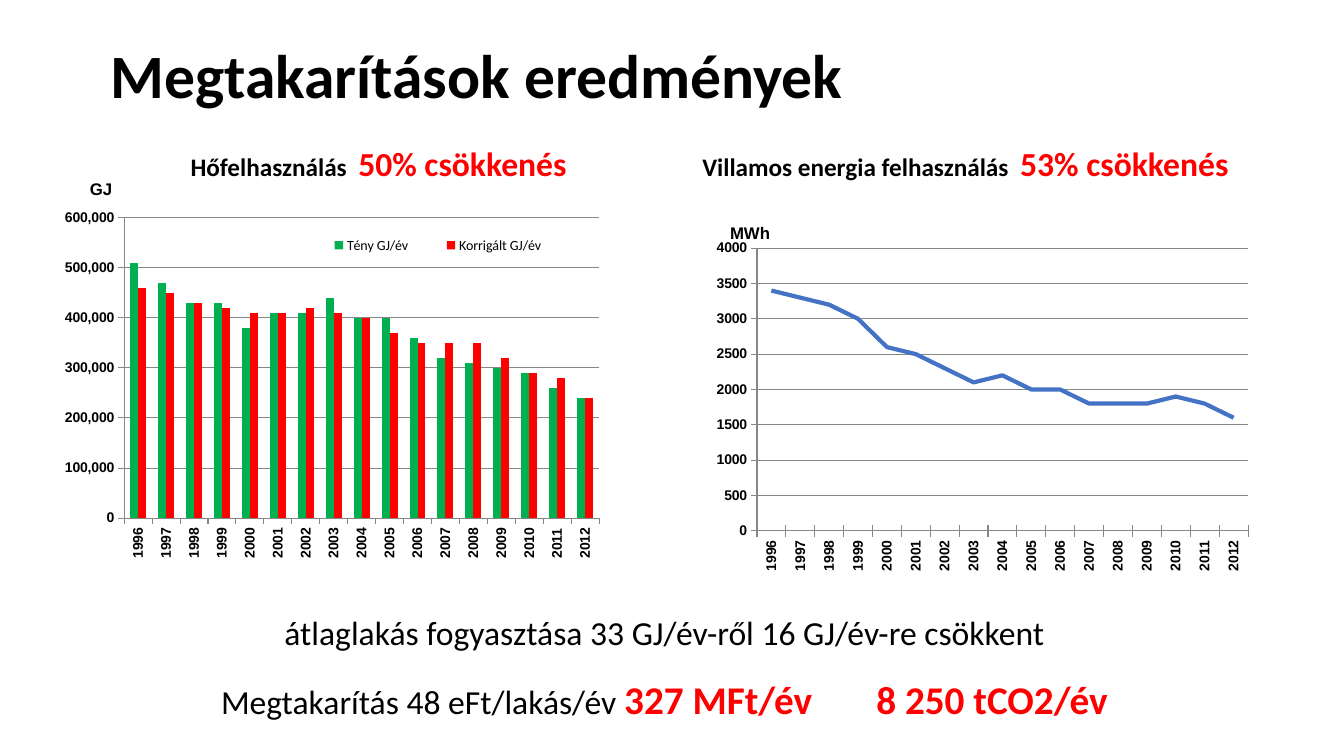
from dataclasses import dataclass

from lxml import etree
from pptx import Presentation
from pptx.chart.data import CategoryChartData
from pptx.dml.color import RGBColor
from pptx.enum import chart as ch, text as tx
from pptx.oxml import ns, parse_xml
from pptx.util import Inches, Pt


@dataclass(frozen=True)
class Theme:
    black: str = "000000"
    red: str = "FF0000"
    green: str = "00B050"
    blue: str = "4472C4"
    grid: str = "868686"
    font: str = "Calibri"
    label: str = "Arial"
    title: int = 44
    large: int = 28
    mid: int = 24
    head: int = 18
    unit: int = 12
    tick: int = 10


T = Theme()
YEARS = [str(year) for year in range(1996, 2013)]
HEAT = [
    ("Tény GJ/év", T.green, [510, 470, 430, 430, 380, 410, 410, 440, 400,
                             400, 360, 320, 310, 300, 290, 260, 240]),
    ("Korrigált GJ/év", T.red, [460, 450, 430, 420, 410, 410, 420, 410, 400,
                                370, 350, 350, 350, 320, 290, 280, 240]),
]
POWER = [("Series 1", T.blue, [34, 33, 32, 30, 26, 25, 23, 21, 22,
                               20, 20, 18, 18, 18, 19, 18, 16])]


def style(font, size, color=T.black, bold=False, name=T.font):
    font.size, font.bold, font.name = Pt(size), bold, name
    font.color.rgb = RGBColor.from_string(color)


def add_run(para, words, size, color=T.black, bold=False):
    run = para.add_run()
    run.text = words
    style(run.font, size, color, bold)
    return run


def add_shade(run):
    """Give the letters a soft shadow falling down and to the left."""
    fill = run.font._element.find(ns.qn("a:solidFill"))
    fill.addnext(parse_xml(
        f'<a:effectLst {ns.nsdecls("a")}><a:outerShdw blurRad="50800" '
        'dist="50800" dir="7200000" algn="tl" rotWithShape="0">'
        '<a:srgbClr val="000000"/></a:outerShdw></a:effectLst>'))


def set_place(node, x, y, w=None, h=None, inner=False):
    """Fix a chart part at fractions of the chart's size."""
    for old in node.findall(ns.qn("c:layout")):
        node.remove(old)
    layout = etree.Element(ns.qn("c:layout"))
    manual = etree.SubElement(layout, ns.qn("c:manualLayout"))
    pairs = [("layoutTarget", "inner")] if inner else []
    pairs += [("xMode", "edge"), ("yMode", "edge"), ("x", x), ("y", y)]
    if w:
        pairs += [("w", w), ("h", h)]
    for tag, val in pairs:
        etree.SubElement(manual, ns.qn(f"c:{tag}")).set("val", str(val))
    over = node.find(ns.qn("c:overlay"))
    if over is None:
        node.insert(0, layout)
    else:
        over.addprevious(layout)


def add_title(slide, box, words):
    title = slide.shapes.title
    title.left, title.top, title.width, title.height = map(Inches, box)
    frame = title.text_frame
    frame.vertical_anchor = tx.MSO_ANCHOR.MIDDLE
    para = frame.paragraphs[0]
    para.alignment, para.line_spacing = tx.PP_ALIGN.LEFT, 0.9
    add_run(para, words, T.title, bold=True)


def add_frame(slide, box):
    frame = slide.shapes.add_textbox(*map(Inches, box)).text_frame
    frame.word_wrap = True
    return frame


def add_head(slide, box, words, drop):
    para = add_frame(slide, box).paragraphs[0]
    para.alignment, para.line_spacing = tx.PP_ALIGN.CENTER, 0.9
    add_run(para, words, T.head, bold=True)
    add_run(para, drop, T.mid, T.red, True)


def set_axis(axis, tick):
    style(axis.tick_labels.font, T.tick, bold=True, name=T.label)
    axis.major_tick_mark = tick
    axis.minor_tick_mark = ch.XL_TICK_MARK.NONE
    axis.format.line.color.rgb = RGBColor.from_string(T.grid)
    axis.format.line.width = Pt(0.75)


def add_plot(slide, box, kind, rows, scale, top, step, unit, spot, area, tick):
    """Add a chart by year with its unit standing above the value axis."""
    data = CategoryChartData()
    data.categories = YEARS
    for name, _, vals in rows:
        data.add_series(name, [val * scale for val in vals])
    chart = slide.shapes.add_chart(kind, *map(Inches, box), data).chart
    chart.has_title = chart.has_legend = False
    style(chart.font, T.tick)
    chart.plots[0].vary_by_categories = False

    years, vals = chart.category_axis, chart.value_axis
    set_axis(years, tick)
    years.tick_label_position = ch.XL_TICK_LABEL_POSITION.LOW
    years.has_major_gridlines = False
    years._element.txPr.bodyPr.set("rot", "-5400000")
    set_axis(vals, ch.XL_TICK_MARK.OUTSIDE)
    vals.minimum_scale, vals.maximum_scale, vals.major_unit = 0, top, step
    vals.has_major_gridlines = True
    line = vals.major_gridlines.format.line
    line.color.rgb, line.width = RGBColor.from_string(T.grid), Pt(0.75)

    frame = vals.axis_title.text_frame
    run = frame.paragraphs[0].add_run()
    run.text = unit
    style(run.font, T.unit, bold=True, name=T.label)
    body = frame._txBody.bodyPr
    body.set("rot", "0")
    body.set("vert", "horz")
    set_place(vals.axis_title._element, *spot)
    set_place(chart._chartSpace.chart.plotArea, *area, inner=True)
    return chart


def add_heat(slide, box):
    chart = add_plot(slide, box, ch.XL_CHART_TYPE.COLUMN_CLUSTERED, HEAT,
                     1000, 600000, 100000, "GJ", (0.05, 0.05),
                     (0.118, 0.143, 0.866, 0.669), ch.XL_TICK_MARK.OUTSIDE)
    labels = chart.value_axis.tick_labels
    labels.number_format, labels.number_format_is_linked = "#,##0", False
    plot = chart.plots[0]
    plot.gap_width, plot.overlap = 150, 0
    for series, (_, color, _) in zip(plot.series, HEAT):
        series.format.fill.solid()
        series.format.fill.fore_color.rgb = RGBColor.from_string(color)
    chart.has_legend = True
    legend = chart.legend
    legend.position = ch.XL_LEGEND_POSITION.RIGHT
    legend.include_in_layout = False
    style(legend.font, T.tick)
    set_place(legend._element, 0.44, 0.17, 0.5, 0.07)


def add_power(slide, box):
    chart = add_plot(slide, box, ch.XL_CHART_TYPE.LINE, POWER,
                     100, 4000, 500, "MWh", (0.04, 0.05),
                     (0.094, 0.124, 0.884, 0.736), ch.XL_TICK_MARK.CROSS)
    cross = chart.value_axis._element.find(ns.qn("c:crossBetween"))
    if cross is not None:
        cross.set("val", "midCat")
    for series, (_, color, _) in zip(chart.plots[0].series, POWER):
        series.smooth = False
        line = series.format.line
        line.color.rgb, line.width = RGBColor.from_string(color), Pt(3)


def add_sums(slide, box):
    frame = add_frame(slide, box)
    lines = [
        [("átlaglakás fogyasztása 33 GJ/év-ről 16 GJ/év-re csökkent", T.mid)],
        [("Megtakarítás 48 eFt/lakás/év ", T.mid),
         ("327 MFt/év", T.large, T.red, True),
         ("\t\t", T.mid, T.red),
         ("8 250 tCO2/év", T.large, T.red, True)],
    ]
    for i, parts in enumerate(lines):
        para = frame.add_paragraph() if i else frame.paragraphs[0]
        para.alignment, para.line_spacing = tx.PP_ALIGN.CENTER, 1.5
        for part in parts:
            add_shade(add_run(para, *part))


def main():
    prs = Presentation()
    prs.slide_width, prs.slide_height = Inches(13.33), Inches(7.5)
    slide = prs.slides.add_slide(prs.slide_layouts.get_by_name("Title Only"))
    add_title(slide, (1, 0.05, 11.5, 1.45), "Megtakarítások eredmények")
    add_head(slide, (0.92, 1.41, 5.67, 0.5),
             "Hőfelhasználás  ", "50% csökkenés")
    add_head(slide, (6.74, 1.41, 5.67, 0.5),
             "Villamos energia felhasználás  ", "53% csökkenés")
    add_heat(slide, (0.59, 1.52, 5.44, 4.46))
    add_power(slide, (6.99, 1.99, 5.51, 3.81))
    add_sums(slide, (0.26, 5.82, 12.66, 1.34))
    prs.save("out.pptx")


if __name__ == "__main__":
    main()
